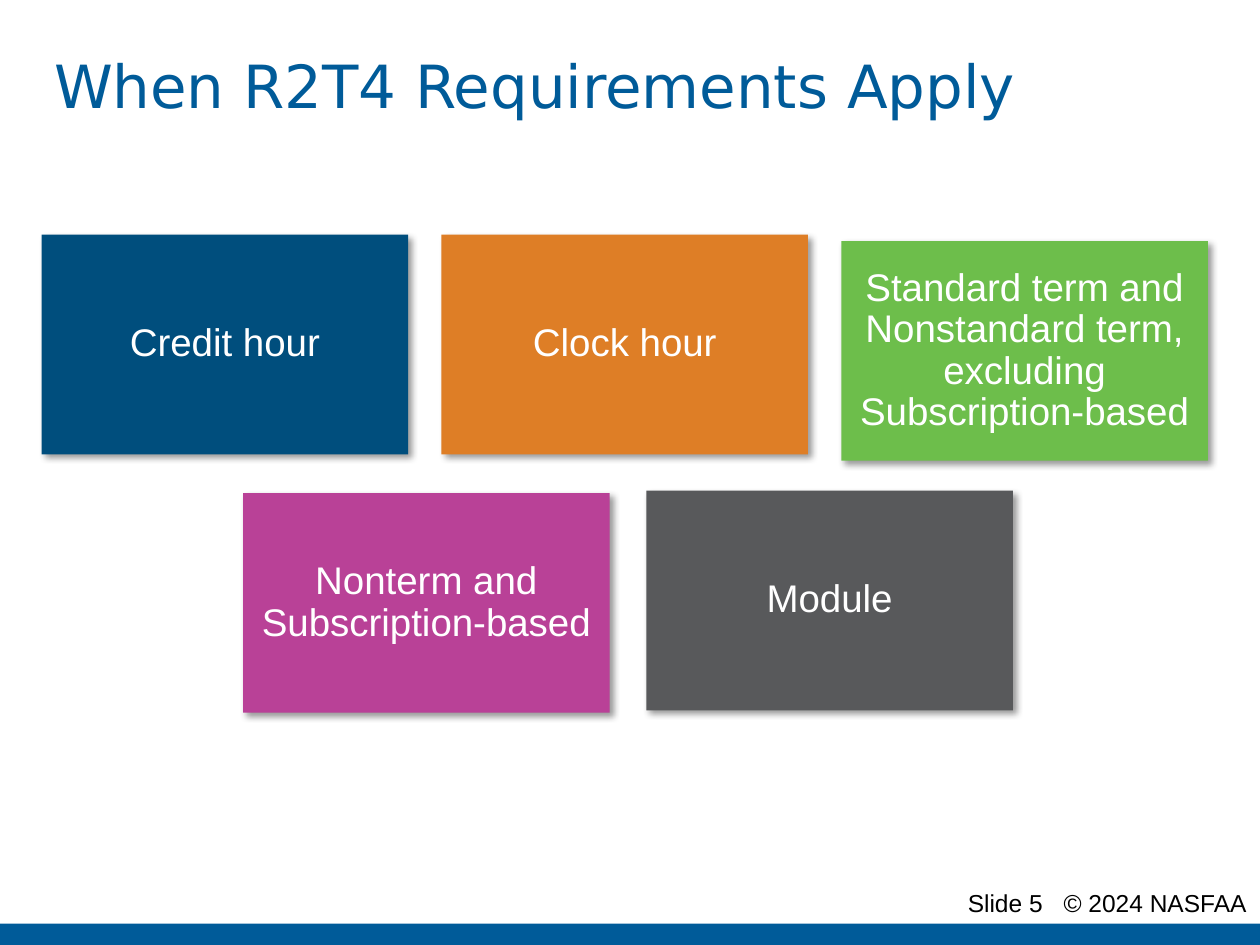
from lxml import etree
from pptx import Presentation
from pptx import util as u
from pptx.dml.color import RGBColor
from pptx.enum import shapes, text
from pptx.oxml import ns

WIDTH, HEIGHT = 25.4, 19.05
BLUE, WHITE, BLACK = "005B99", "FFFFFF", "000000"
BODY_FONT, TITLE_FONT = "Arial", "DejaVu Sans"

TITLE = "When R2T4 Requirements Apply"
FOOTER = "Slide 5", "\t© 2024 NASFAA"
FOOTER_TAB = 1.93

CARD_WIDTH, CARD_HEIGHT = 7.39, 4.43
CARDS = [  # wording, fill, left, top
    ("Credit hour", "004E7D", 0.84, 4.73),
    ("Clock hour", "DE7E26", 8.9, 4.73),
    ("Standard term and Nonstandard term, excluding Subscription-based",
     "6DBE4B", 16.96, 4.86),
    ("Nonterm and Subscription-based", "B94197", 4.9, 9.94),
    ("Module", "58595B", 13.03, 9.89),
]


def colour(value):
    return RGBColor.from_string(value)


def add_rectangle(page, left, top, width, height, fill):
    box = page.shapes.add_shape(
        shapes.MSO_SHAPE.RECTANGLE,
        u.Cm(left), u.Cm(top), u.Cm(width), u.Cm(height))
    box.shadow.inherit = False
    box.fill.solid()
    box.fill.fore_color.rgb = colour(fill)
    box.line.fill.background()
    return box


def add_text_box(page, left, top, width, height):
    return page.shapes.add_textbox(
        u.Cm(left), u.Cm(top), u.Cm(width), u.Cm(height))


def write(box, runs, size, font, shade, align, anchor, inset=None):
    """Fill the first paragraph of a box and return that paragraph."""
    frame = box.text_frame
    frame.word_wrap = True
    frame.vertical_anchor = anchor
    if inset is not None:
        frame.margin_left = frame.margin_right = u.Cm(inset)
        frame.margin_top = frame.margin_bottom = u.Cm(inset)
    para = frame.paragraphs[0]
    para.alignment = align
    for wording in runs:
        span = para.add_run()
        span.text = wording
        span.font.size = u.Pt(size)
        span.font.name = font
        span.font.color.rgb = colour(shade)
    return para


def add_element(parent, tag, **attributes):
    return etree.SubElement(parent, ns.qn(tag), attributes)


def add_soft_shadow(box):
    effects = box._element.spPr.find(ns.qn("a:effectLst"))
    shadow = add_element(
        effects, "a:outerShdw", blurRad=str(u.Pt(4)), dist=str(u.Pt(3)),
        dir=str(45 * 60000), algn="tl", rotWithShape="0")
    shade = add_element(shadow, "a:srgbClr", val=BLACK)
    add_element(shade, "a:alpha", val="40000")


def add_tab(para, position):
    tabs = add_element(para._p.get_or_add_pPr(), "a:tabLst")
    add_element(tabs, "a:tab", pos=str(u.Cm(position)), algn="l")


def main():
    deck = Presentation()
    deck.slide_width, deck.slide_height = u.Cm(WIDTH), u.Cm(HEIGHT)
    page = deck.slides.add_slide(deck.slide_layouts[6])
    align, anchor = text.PP_ALIGN, text.MSO_ANCHOR

    bar_top = 18.62
    add_rectangle(page, 0, bar_top, WIDTH, HEIGHT - bar_top, BLUE)

    footer_left = 19.26
    box = add_text_box(page, footer_left, 17.78, WIDTH - footer_left, 0.64)
    para = write(box, FOOTER, 14, BODY_FONT, BLACK, align.LEFT, anchor.TOP)
    box.text_frame.margin_right = 0
    add_tab(para, FOOTER_TAB)

    box = add_text_box(page, 0.84, 0.43, 23.62, 2.54)
    write(box, [TITLE], 34, TITLE_FONT, BLUE, align.LEFT, anchor.MIDDLE)

    for wording, fill, left, top in CARDS:
        card = add_rectangle(page, left, top, CARD_WIDTH, CARD_HEIGHT, fill)
        add_soft_shadow(card)
        para = write(card, [wording], 22, BODY_FONT, WHITE,
                     align.CENTER, anchor.MIDDLE, inset=0.23)
        para.line_spacing = 0.9

    deck.save("out.pptx")


if __name__ == "__main__":
    main()
